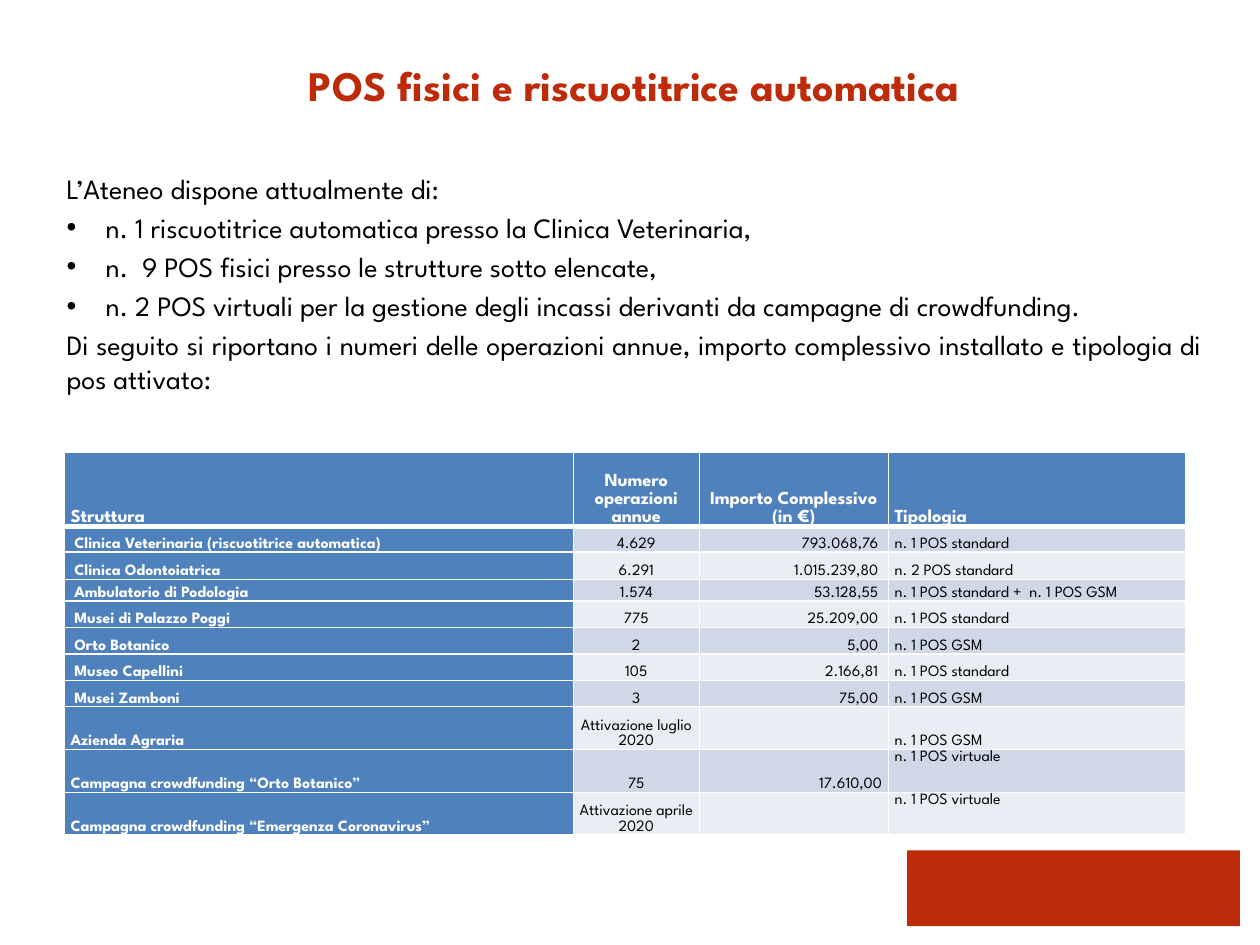
from typing import NamedTuple

from lxml.etree import SubElement
from pptx import Presentation
from pptx.dml.color import RGBColor
from pptx.enum.shapes import MSO_SHAPE
from pptx.enum.text import MSO_ANCHOR as Anchor, MSO_AUTO_SIZE as AutoSize, PP_ALIGN as Align
from pptx.oxml.ns import qn
from pptx.util import Inches, Pt

FONT = "League Spartan"
COLORS = {
    "red": "BD2B0B",
    "blue": "4F81BD",
    "band_dark": "D0D8E8",
    "band_light": "E9EDF4",
    "white": "FFFFFF",
    "black": "000000",
}


class Line(NamedTuple):
    text: str
    bullet: bool = False
    align: Align = Align.LEFT


class Row(NamedTuple):
    structure: str
    operations: str
    amount: str
    kind: str
    height: float
    indent: float = 0.03
    kind_anchor: Anchor = Anchor.BOTTOM


INTRO = [
    Line("L’Ateneo dispone attualmente di:"),
    Line("n. 1 riscuotitrice automatica presso la Clinica Veterinaria,", bullet=True),
    Line("n.  9 POS fisici presso le strutture sotto elencate,", bullet=True),
    Line("n. 2 POS virtuali per la gestione degli incassi derivanti da campagne di crowdfunding.",
         bullet=True, align=Align.JUSTIFY),
    Line("Di seguito si riportano i numeri delle operazioni annue, importo complessivo "
         "installato e tipologia di pos attivato:", align=Align.JUSTIFY),
]
HEADER = Row("Struttura", "Numero operazioni annue", "Importo Complessivo (in €)",
             "Tipologia", 0.59, indent=0)
ROWS = [
    Row("Clinica Veterinaria (riscuotitrice automatica)", "4.629", "793.068,76",
        "n. 1 POS standard", 0.2),
    Row("Clinica Odontoiatrica", "6.291", "1.015.239,80", "n. 2 POS standard", 0.22),
    Row("Ambulatorio di Podologia", "1.574", "53.128,55",
        "n. 1 POS standard +  n. 1 POS GSM", 0.17),
    Row("Musei di Palazzo Poggi", "775", "25.209,00", "n. 1 POS standard", 0.21),
    Row("Orto Botanico", "2", "5,00", "n. 1 POS GSM", 0.21),
    Row("Museo Capellini", "105", "2.166,81", "n. 1 POS standard", 0.21),
    Row("Musei Zamboni", "3", "75,00", "n. 1 POS GSM", 0.21),
    Row("Azienda Agraria", "Attivazione luglio 2020", "", "n. 1 POS GSM", 0.34, indent=0),
    Row("Campagna crowdfunding “Orto Botanico”", "75", "17.610,00", "n. 1 POS virtuale",
        0.34, indent=0, kind_anchor=Anchor.TOP),
    Row("Campagna crowdfunding “Emergenza Coronavirus”", "Attivazione aprile 2020", "",
        "n. 1 POS virtuale", 0.34, indent=0, kind_anchor=Anchor.TOP),
]
COLUMN_WIDTHS = [4.04, 1, 1.5, 2.36]
HEADER_ALIGNS = [Align.JUSTIFY, Align.CENTER, Align.CENTER, Align.JUSTIFY]
BODY_ALIGNS = [Align.JUSTIFY, Align.CENTER, Align.RIGHT, Align.LEFT]


def rgb(name: str) -> RGBColor:
    return RGBColor.from_string(COLORS[name])


def write(para, text: str, *, size: float, color: str = "black", bold: bool = False,
          align: Align = Align.LEFT) -> None:
    para.alignment = align
    span = para.add_run()
    span.text = text
    span.font.name = FONT
    span.font.size = Pt(size)
    span.font.bold = bold
    span.font.color.rgb = rgb(color)


def add_bullet(para) -> None:
    props = para._p.get_or_add_pPr()
    props.set("marL", str(Inches(0.31)))
    props.set("indent", str(-Inches(0.31)))
    SubElement(props, qn("a:buFont"), typeface="Arial")
    SubElement(props, qn("a:buChar"), char="•")


def set_borders(cell, widths: dict[str, float]) -> None:
    """Draw white borders; the sides are given in the order L, R, T, B."""
    props = cell._tc.get_or_add_tcPr()
    for side, width in widths.items():
        line = SubElement(props, qn(f"a:ln{side}"), w=str(Pt(width)))
        fill = SubElement(line, qn("a:solidFill"))
        SubElement(fill, qn("a:srgbClr"), val=COLORS["white"])


def fill_cell(cell, text: str, *, fill: str, size: float, color: str, bold: bool,
              align: Align, anchor: Anchor, left: float, right: float,
              top_border: float, bottom_border: float) -> None:
    set_borders(cell, {"L": 1, "R": 1, "T": top_border, "B": bottom_border})
    cell.fill.solid()
    cell.fill.fore_color.rgb = rgb(fill)
    cell.vertical_anchor = anchor
    cell.margin_left, cell.margin_right = Inches(left), Inches(right)
    cell.margin_top = cell.margin_bottom = 0
    if text:
        para = cell.text_frame.paragraphs[0]
        para.line_spacing = 1.07
        para.space_after = Pt(8)
        write(para, text, size=size, color=color, bold=bold, align=align)


def add_title(page, text: str) -> None:
    title = page.shapes.title
    title.left, title.top = Inches(0.43), Inches(0.52)
    title.width, title.height = Inches(9.21), Inches(0.71)
    frame = title.text_frame
    frame.auto_size = AutoSize.NONE
    frame.vertical_anchor = Anchor.TOP
    para = frame.paragraphs[0]
    para.line_spacing = Pt(22)
    write(para, text, size=24, color="red", bold=True, align=Align.CENTER)


def add_intro(page, lines: list[Line]) -> None:
    box = page.shapes.add_textbox(Inches(0.43), Inches(1.31), Inches(9.21), Inches(2.1))
    frame = box.text_frame
    frame.word_wrap = True
    for index, line in enumerate(lines):
        para = frame.add_paragraph() if index else frame.paragraphs[0]
        if index:
            para.space_before = Pt(3.2)
        if line.bullet:
            add_bullet(para)
        write(para, line.text, size=16, align=line.align)


def add_pos_table(page) -> None:
    rows = [HEADER, *ROWS]
    table = page.shapes.add_table(
        len(rows), len(COLUMN_WIDTHS), Inches(0.51), Inches(3.59),
        Inches(sum(COLUMN_WIDTHS)), Inches(sum(row.height for row in rows))).table
    table.horz_banding = False
    for column, width in zip(table.columns, COLUMN_WIDTHS):
        column.width = Inches(width)
    for r, row in enumerate(rows):
        table.rows[r].height = Inches(row.height)
        is_header = r == 0
        band = "band_dark" if r % 2 else "band_light"
        aligns = HEADER_ALIGNS if is_header else BODY_ALIGNS
        for c, text in enumerate(row[:4]):
            strong = is_header or c == 0
            fill_cell(
                table.cell(r, c), text,
                fill="blue" if strong else band,
                size=10.5 if is_header else 9,
                color="white" if strong else "black",
                bold=strong,
                align=aligns[c],
                anchor=row.kind_anchor if c == 3 else Anchor.BOTTOM,
                left=0.05 + (row.indent if c == 0 else 0),
                right=0.05 + (row.indent if c == 2 else 0),
                top_border=3 if r == 1 else 1,
                bottom_border=3 if is_header else 1)


def add_footer_block(page) -> None:
    block = page.shapes.add_shape(
        MSO_SHAPE.RECTANGLE, Inches(7.2), Inches(6.75), Inches(2.64), Inches(0.6))
    block.shadow.inherit = False
    block.fill.solid()
    block.fill.fore_color.rgb = rgb("red")
    block.line.fill.background()


def main() -> None:
    deck = Presentation()
    deck.slide_width, deck.slide_height = Inches(10), Inches(7.5)
    page = deck.slides.add_slide(deck.slide_layouts[5])
    add_footer_block(page)
    add_title(page, "POS fisici e riscuotitrice automatica")
    add_intro(page, INTRO)
    add_pos_table(page)
    deck.save("out.pptx")


if __name__ == "__main__":
    main()
